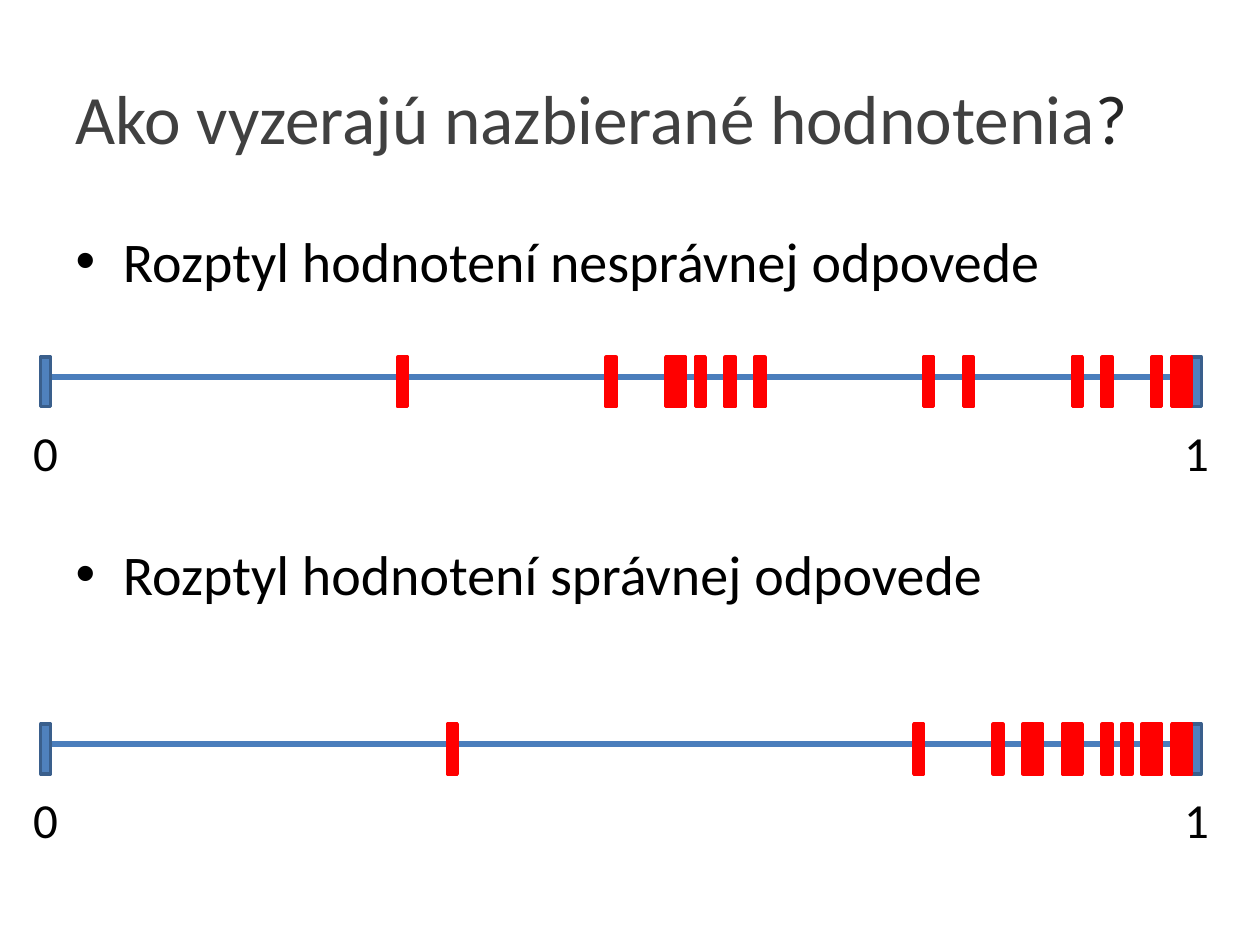
from lxml import etree
from pptx import Presentation, util as u
from pptx.dml.color import RGBColor
from pptx.enum import shapes, text
from pptx.oxml.ns import qn

COLUMNS = 127
AXIS_LEFT = 4.1
AXIS_STEPS = 116
TICK_ROWS = 5
WRONG_RATINGS = (36, 57, 63, 64, 66, 69, 72, 89, 93, 104, 107, 112, 114, 115)
RIGHT_RATINGS = (41, 88, 96, 99, 100, 103, 104, 107, 109, 111, 112, 114, 115)


def colour(code):
    """Turn a hex string into a colour."""
    return RGBColor.from_string(code)


class Board:
    """Hold the style and the current slide, measured in square grid cells."""

    font = "Calibri"
    ink = "000000"
    axis_line, end_fill, end_line, mark = "4B7EBC", "4F81BD", "3A5F8C", "FF0000"

    def __init__(self, deck):
        """Add a title and content page to the deck."""
        self.cell = deck.slide_width / COLUMNS
        self.page = deck.slides.add_slide(deck.slide_layouts[1])

    def grid(self, *cells):
        """Turn counts of cells into lengths."""
        return [u.Emu(round(count * self.cell)) for count in cells]

    def add_span(self, para, words, size, code):
        """Add one styled run to a paragraph."""
        span = para.add_run()
        span.text = words
        span.font.name = self.font
        span.font.size = u.Pt(size)
        span.font.color.rgb = colour(code)

    def title(self, *runs):
        """Fill the title with pairs of words and colour."""
        frame = self.page.shapes.title.text_frame
        frame.auto_size = text.MSO_AUTO_SIZE.NONE
        para = frame.paragraphs[0]
        para.alignment = text.PP_ALIGN.LEFT
        for words, code in runs:
            self.add_span(para, words, 39.6, code)

    def bullets(self, items, gap):
        """Fill the body with bullets separated by a gap in points."""
        frame = self.page.placeholders[1].text_frame
        frame.auto_size = text.MSO_AUTO_SIZE.NONE
        for index, words in enumerate(items):
            para = frame.add_paragraph() if index else frame.paragraphs[0]
            if index:
                para.space_before = u.Pt(gap)
            self.add_span(para, words, 32, self.ink)

    def tick(self, group, step, row, fill, line):
        """Draw one upright bar at a step of the axis."""
        box = group.shapes.add_shape(
            shapes.MSO_SHAPE.RECTANGLE,
            *self.grid(AXIS_LEFT + step, row, 1, TICK_ROWS))
        box.shadow.inherit = False
        box.fill.solid()
        box.fill.fore_color.rgb = colour(fill)
        box.line.color.rgb = colour(line)
        box.line.width = u.Pt(2)

    def label(self, group, step, row, words):
        """Put a value below a step of the axis."""
        box = group.shapes.add_textbox(
            *self.grid(AXIS_LEFT + step - 2, row, 5, 7.25))
        frame = box.text_frame
        frame.word_wrap = False
        frame.auto_size = text.MSO_AUTO_SIZE.SHAPE_TO_FIT_TEXT
        self.add_span(frame.paragraphs[0], words, 28, self.ink)

    def scale(self, row, ratings):
        """Draw an axis from 0 to 1 with a bar for each rating."""
        group = self.page.shapes.add_group_shape()
        axis = group.shapes.add_connector(
            shapes.MSO_CONNECTOR.STRAIGHT,
            *self.grid(AXIS_LEFT, row + 2, AXIS_LEFT + AXIS_STEPS, row + 2))
        axis.line.color.rgb = colour(self.axis_line)
        axis.line.width = u.Pt(3)
        etree.SubElement(axis.element.spPr, qn("a:effectLst"))
        ends = (0, AXIS_STEPS)
        for step in ends:
            self.tick(group, step, row, self.end_fill, self.end_line)
        for step in ratings:
            self.tick(group, step, row, self.mark, self.mark)
        for step, words in zip(ends, "01"):
            self.label(group, step, row + TICK_ROWS + 1, words)


def main():
    """Build the slide and save it."""
    deck = Presentation()
    deck.slide_width, deck.slide_height = u.Inches(10), u.Inches(7.5)
    board = Board(deck)
    board.title(("Ako vyzerajú nazbierané hodnotenia", "404040"), ("?", "262626"))
    board.bullets(("Rozptyl hodnotení nesprávnej odpovede",
                   "Rozptyl hodnotení správnej odpovede"), gap=140)
    board.scale(36, WRONG_RATINGS)
    board.scale(73, RIGHT_RATINGS)
    deck.save("out.pptx")


if __name__ == "__main__":
    main()
